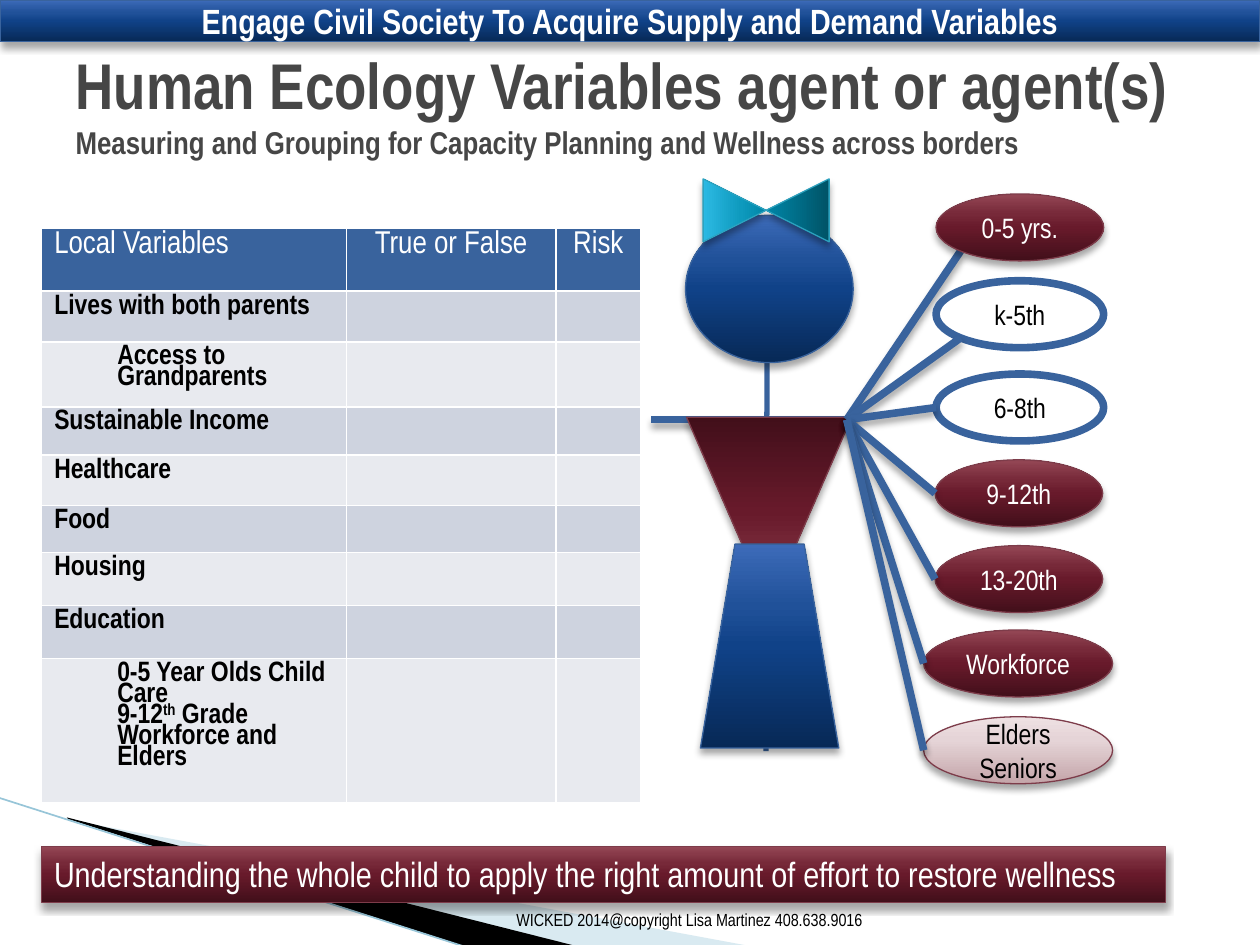
from math import cos, pi, sin

from lxml.etree import SubElement
from pptx import Presentation
from pptx.dml.color import RGBColor
from pptx.enum.shapes import MSO_CONNECTOR, MSO_SHAPE as Shape
from pptx.enum.text import MSO_ANCHOR as Anchor, MSO_AUTO_SIZE as AutoSize, PP_ALIGN as Align
from pptx.oxml.ns import qn
from pptx.util import Cm, Pt

FONT = "Arial Narrow"
BLUE, MAROON, WHITE, BLACK, GRAY = "39639D", "7D3C4A", "FFFFFF", "000000", "464646"
BLUE_FADE = [(0, "072956"), (50, "104288"), (70, "205199"), (100, "3D6BB9")]
MAROON_FADE = [(0, "420F1A"), (50, "681A2B"), (70, "772939"), (100, "944755")]
TEAL_FADE = [(0, "005367"), (50, "0086A7"), (70, "0E9ABE"), (100, "2CB9E3")]
ROSE_FADE = [(0, "C4A5A9"), (65, "E5D4D7"), (100, "EEE0E2")]

HUB = (17.07, 8.46)
# label, left, top, width, fill, line colour, line width, text colour
GROUPS = [
    ("0-5 yrs.", 18.87, 3.91, 3.38, MAROON_FADE, MAROON, 0.75, WHITE),
    ("k-5th", 18.87, 5.66, 3.38, WHITE, BLUE, 4.33, BLACK),
    ("6-8th", 18.87, 7.54, 3.38, WHITE, BLUE, 4.33, BLACK),
    ("9-12th", 18.85, 9.27, 3.38, MAROON_FADE, MAROON, 0.75, WHITE),
    ("13-20th", 18.85, 11, 3.38, MAROON_FADE, MAROON, 0.75, WHITE),
    ("Workforce", 18.62, 12.7, 3.81, MAROON_FADE, MAROON, 0.75, WHITE),
    ("Elders Seniors", 18.62, 14.45, 3.81, ROSE_FADE, MAROON, 0.75, BLACK),
]
GROUP_HEIGHT = 1.35

HEADERS = ["Local Variables", "True or False", "Risk"]
COLUMNS = [6.14, 4.23, 1.7]
# row height, indented, paragraphs
VARIABLES = [
    (1.02, False, ["Lives with both parents"]),
    (1.31, True, ["Access to Grandparents"]),
    (0.97, False, ["Sustainable Income"]),
    (1.02, False, ["Healthcare"]),
    (0.84, False, ["Food"]),
    (1.07, False, ["Housing"]),
    (1.07, False, ["Education"]),
    (2.9, True, ["0-5 Year Olds Child Care", "9-12^th^ Grade", "Workforce and Elders"]),
]


def rgb(color):
    return RGBColor.from_string(color)


def write(p, text, size=16, color=BLACK, bold=False, align=None):
    """Add text to a paragraph; parts between ^ marks are superscript."""
    if align is not None:
        p.alignment = align
    for i, part in enumerate(text.split("^")):
        r = p.add_run()
        r.text = part
        r.font.name, r.font.size, r.font.bold = FONT, Pt(size), bold
        r.font.color.rgb = rgb(color)
        if i % 2:
            r.font._element.set("baseline", "30000")


def set_fill(fill, paint):
    """Fill with one colour, or with a list of stops running from bottom to top."""
    if isinstance(paint, str):
        fill.solid()
        fill.fore_color.rgb = rgb(paint)
        return
    fill.gradient()
    fill.gradient_angle = 90
    stops = fill._xPr.find(qn("a:gradFill")).find(qn("a:gsLst"))
    for stop in list(stops):
        stops.remove(stop)
    for position, color in paint:
        stop = SubElement(stops, qn("a:gs"), pos=str(position * 1000))
        SubElement(stop, qn("a:srgbClr"), val=color)


def set_shadow(sp, on):
    effects = SubElement(sp._element.spPr, qn("a:effectLst"))
    if on:
        shadow = SubElement(effects, qn("a:outerShdw"), blurRad=str(Pt(4)), dist=str(Pt(3)),
                            dir="5400000", rotWithShape="0")
        color = SubElement(shadow, qn("a:srgbClr"), val=BLACK)
        SubElement(color, qn("a:alpha"), val="35000")


def decorate(sp, paint, line=None, width=0.75, shadow=True):
    set_fill(sp.fill, paint)
    if line:
        sp.line.color.rgb = rgb(line)
        sp.line.width = Pt(width)
    else:
        sp.line.fill.background()
    set_shadow(sp, shadow)
    return sp


def add_preset(s, kind, box, paint, line, width=0.75, shadow=True, rotation=0):
    sp = s.shapes.add_shape(kind, *map(Cm, box))
    sp.rotation = rotation
    return decorate(sp, paint, line, width, shadow)


def add_polygon(s, points, paint, **look):
    start, *rest = [(Cm(x), Cm(y)) for x, y in points]
    builder = s.shapes.build_freeform(*start, scale=1.0)
    builder.add_line_segments(rest, close=True)
    return decorate(builder.convert_to_shape(), paint, **look)


def add_line(s, start, end, color=BLUE, width=4.33, shadow=True):
    ln = s.shapes.add_connector(MSO_CONNECTOR.STRAIGHT, *map(Cm, (*start, *end)))
    ln.line.color.rgb = rgb(color)
    ln.line.width = Pt(width)
    set_shadow(ln, shadow)


def add_swoosh(s):
    pale = add_polygon(s, [(1.4, 16.53), (15.11, 19.07), (11.58, 19.07), (1.4, 16.51)],
                       "A0CBDC", shadow=False)
    color = pale._element.spPr.find(qn("a:solidFill"))[0]
    SubElement(color, qn("a:alpha"), val="40000")
    add_polygon(s, [(1.35, 16.48), (11.61, 19.07), (9.45, 19.1), (1.37, 16.51)],
                BLACK, shadow=False)
    add_line(s, (-0.03, 16.08), (9.42, 19.1), "97C5D8", 0.95, shadow=False)


def add_title(s):
    title = s.shapes.title
    title.left, title.top, title.width, title.height = map(Cm, (1.27, 0.48, 22.86, 3.18))
    tf = title.text_frame
    tf.auto_size, tf.vertical_anchor = AutoSize.NONE, Anchor.MIDDLE
    p = tf.paragraphs[0]
    write(p, "Human Ecology Variables agent or agent(s)", size=36.9, color=GRAY, bold=True,
          align=Align.LEFT)
    p.add_line_break()
    SubElement(p._p.find(qn("a:br")), qn("a:rPr"), sz="3690")
    write(p, "Measuring and Grouping for Capacity Planning and Wellness across borders",
          size=18, color=GRAY, bold=True)


def add_variables_table(s):
    heights = [1.27] + [height for height, _, _ in VARIABLES]
    table = s.shapes.add_table(len(heights), len(COLUMNS), Cm(0.84), Cm(4.6),
                               Cm(sum(COLUMNS)), Cm(sum(heights))).table
    for column, width in zip(table.columns, COLUMNS):
        column.width = Cm(width)
    for row, height in zip(table.rows, heights):
        row.height = Cm(height)
    for i, header in enumerate(HEADERS):
        cell = table.cell(0, i)
        set_fill(cell.fill, BLUE)
        p = cell.text_frame.paragraphs[0]
        p.line_spacing = 0.8
        write(p, header, size=18, color=WHITE, align=Align.CENTER if i else Align.LEFT)
    for i, (_, indented, lines) in enumerate(VARIABLES, 1):
        first, *empty = table.rows[i].cells
        for cell in (first, *empty):
            set_fill(cell.fill, "CED3DF" if i % 2 else "E8EAEF")
        for j, line in enumerate(lines):
            tf = first.text_frame
            p = tf.add_paragraph() if j else tf.paragraphs[0]
            p.line_spacing = 0.8
            if indented:
                p.level = 1
                p._p.get_or_add_pPr().set("marL", str(Cm(1.27)))
            write(p, line, bold=True)
        for cell in empty:
            p = cell.text_frame.paragraphs[0]
            p.line_spacing = 0.8
            SubElement(p._p, qn("a:endParaRPr"), sz="1600")


def add_group(s, label, left, top, width, paint, line, line_width, color):
    sp = add_preset(s, Shape.OVAL, (left, top, width, GROUP_HEIGHT), paint, line, line_width,
                    shadow=paint != WHITE)
    sp.text_frame.vertical_anchor = Anchor.MIDDLE
    write(sp.text_frame.paragraphs[0], label, color=color, align=Align.CENTER)


def add_spoke(s, group, angle):
    """Join the hub to the rim of a group's ellipse, angle measured from its left end."""
    _, left, top, width, *_ = group
    x = left + width / 2 * (1 - cos(angle))
    y = top + GROUP_HEIGHT / 2 * (1 + sin(angle))
    add_line(s, (x, y), HUB)


def add_bar(s):
    bar = add_preset(s, Shape.RECTANGLE, (0.84, 17.07, 22.66, 1.12), MAROON_FADE, MAROON)
    bar.text_frame.vertical_anchor = Anchor.TOP
    write(bar.text_frame.paragraphs[0],
          "Understanding the whole child to apply the right amount of effort to restore wellness",
          size=20, color=WHITE, align=Align.LEFT)


def add_banner(s):
    banner = add_polygon(s, [(0, 0), (25.4, 0), (25.4, 0.84), (0, 0.84)], BLUE_FADE, line=BLUE)
    tf = banner.text_frame
    tf.vertical_anchor, tf.word_wrap = Anchor.MIDDLE, True
    tf.margin_left = tf.margin_right = Cm(0.1)
    tf.margin_top = tf.margin_bottom = Cm(0.05)
    write(tf.paragraphs[0], "Engage Civil Society To Acquire Supply and Demand Variables",
          size=20, color=WHITE, bold=True, align=Align.CENTER)


def add_footer(s):
    tf = s.shapes.add_textbox(*map(Cm, (10.16, 18.19, 8.26, 0.69))).text_frame
    tf.word_wrap = True
    write(tf.paragraphs[0], "WICKED 2014@copyright Lisa Martinez 408.638.9016", size=10)


def main():
    prs = Presentation()
    prs.slide_width, prs.slide_height = Cm(25.4), Cm(19.05)
    s = prs.slides.add_slide(prs.slide_layouts[5])
    add_swoosh(s)
    add_line(s, (15.47, 4.52), (15.44, 15.14), width=3, shadow=False)
    add_variables_table(s)
    add_title(s)
    add_preset(s, Shape.OVAL, (13.82, 4.34, 3.38, 2.97), BLUE_FADE, BLUE)
    add_line(s, (13.13, 8.46), (17.15, 8.46))
    add_preset(s, Shape.ISOSCELES_TRIANGLE, (13.84, 8.41, 3.33, 3.81), MAROON_FADE, MAROON,
               rotation=180)
    add_spoke(s, GROUPS[0], pi / 4)
    for group in GROUPS:
        add_group(s, *group)
    add_bar(s)
    add_spoke(s, GROUPS[1], pi / 4)
    for group in GROUPS[2:]:
        add_spoke(s, group, 0)
    add_banner(s)
    add_preset(s, Shape.TRAPEZOID, (14.12, 10.97, 2.79, 4.11), BLUE_FADE, BLUE)
    add_preset(s, Shape.FLOWCHART_COLLATE, (14.81, 2.97, 1.27, 2.54), TEAL_FADE, "2DA2BF",
               rotation=270)
    add_footer(s)
    prs.save("out.pptx")


if __name__ == "__main__":
    main()
